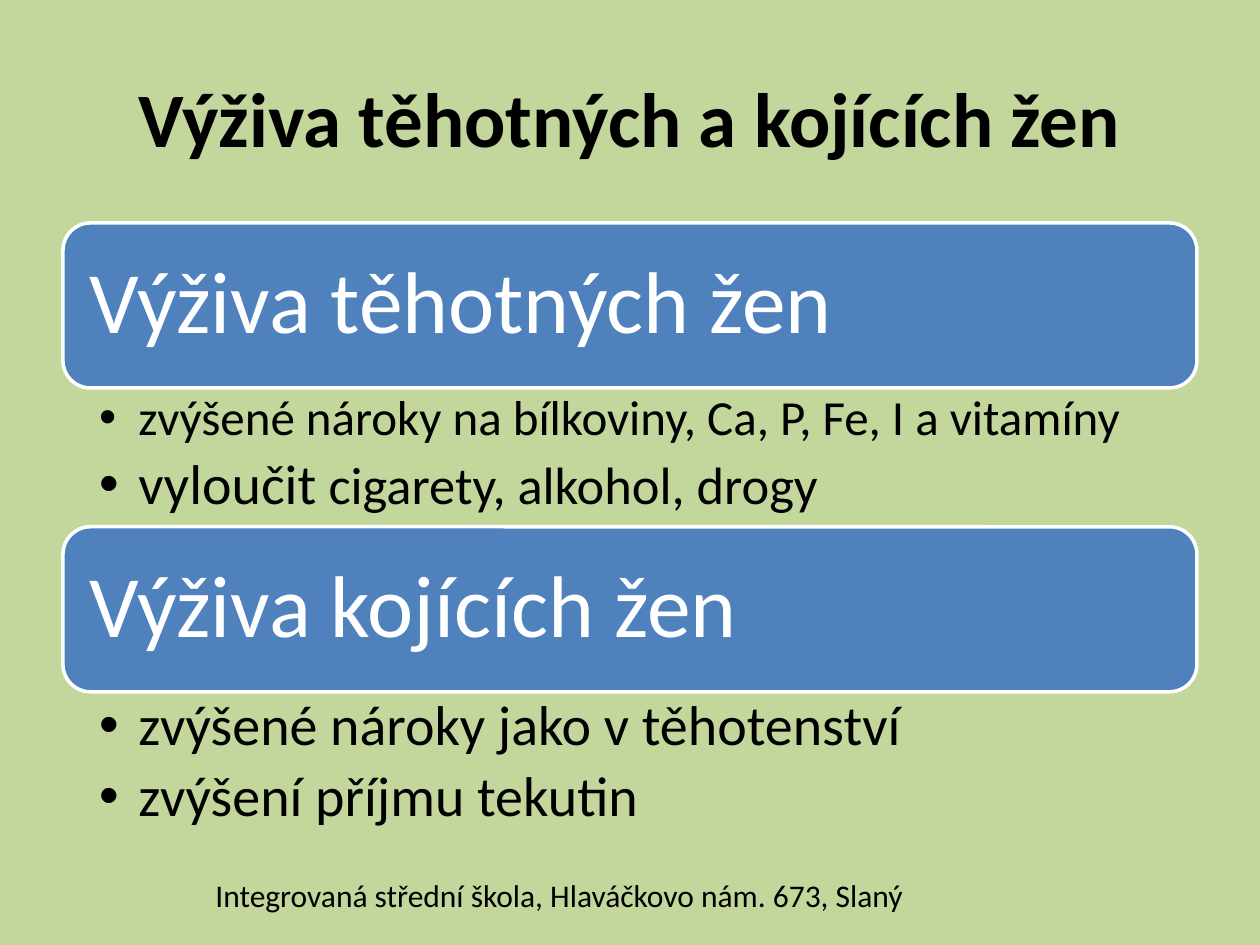
from lxml.etree import SubElement
from pptx import Presentation
from pptx.dml.color import RGBColor
from pptx.enum.shapes import MSO_SHAPE
from pptx.enum.text import MSO_ANCHOR, PP_ALIGN
from pptx.oxml.ns import qn
from pptx.util import Pt

GREEN = RGBColor(0xC3, 0xD6, 0x9B)
BLUE = RGBColor(0x4F, 0x81, 0xBD)
WHITE = RGBColor(0xFF, 0xFF, 0xFF)
BLACK = RGBColor(0, 0, 0)
FONT = "Calibri"
LEFT, WIDE = 36, 648
TOP, STEP, HIGH = 127.4, 173.6, 94.3

PARTS = [
    ("Výživa těhotných žen", 79.2, [
        [("zvýšené nároky na bílkoviny, Ca, P, Fe, I a vitamíny", 28)],
        [("vyloučit", 32), (" cigarety, alkohol, drogy", 30)],
    ]),
    ("Výživa kojících žen", 85.7, [
        [("zvýšené nároky jako v těhotenství", 32)],
        [("zvýšení příjmu tekutin", 32)],
    ]),
]


def add_run(para, text, size, color=BLACK, bold=False):
    """Add one formatted run to a paragraph."""
    run = para.add_run()
    run.text = text
    font = run.font
    font.name, font.size, font.bold = FONT, Pt(size), bold
    font.color.rgb = color


def set_frame(frame, left, top, right, low, anchor=MSO_ANCHOR.TOP):
    """Set the wrapping, insets and anchor of a text frame."""
    frame.word_wrap = True
    frame.vertical_anchor = anchor
    frame.margin_left, frame.margin_top = Pt(left), Pt(top)
    frame.margin_right, frame.margin_bottom = Pt(right), Pt(low)


def set_bullet(para):
    """Give a paragraph a round bullet and a hanging indent."""
    props = para._p.get_or_add_pPr()
    props.set("marL", str(Pt(22.5)))
    props.set("indent", str(Pt(-22.5)))
    SubElement(props, qn("a:buFont"), typeface="Arial")
    SubElement(props, qn("a:buChar"), char="•")


def add_title(slide, text):
    """Place and fill the title."""
    title = slide.shapes.title
    title.left, title.top = Pt(LEFT), Pt(21.6)
    title.width, title.height = Pt(WIDE), Pt(90)
    title.text_frame.vertical_anchor = MSO_ANCHOR.MIDDLE
    para = title.text_frame.paragraphs[0]
    para.alignment = PP_ALIGN.CENTER
    add_run(para, text, 44, bold=True)


def add_bar(slide, top, text):
    """Draw a rounded heading bar."""
    bar = slide.shapes.add_shape(
        MSO_SHAPE.ROUNDED_RECTANGLE, Pt(LEFT), Pt(top), Pt(WIDE), Pt(HIGH))
    bar.shadow.inherit = False
    bar.fill.solid()
    bar.fill.fore_color.rgb = BLUE
    bar.line.color.rgb = WHITE
    bar.line.width = Pt(2)
    set_frame(bar.text_frame, 10.5, 10.5, 10.5, 10.5, MSO_ANCHOR.MIDDLE)
    para = bar.text_frame.paragraphs[0]
    para.alignment = PP_ALIGN.LEFT
    para.line_spacing = 0.9
    add_run(para, text, 50, WHITE)


def add_list(slide, top, high, items):
    """Write a bulleted list below a bar."""
    box = slide.shapes.add_textbox(Pt(LEFT), Pt(top), Pt(WIDE), Pt(high))
    frame = box.text_frame
    set_frame(frame, 20.6, 2.9, 16, 2.9)
    for num, runs in enumerate(items):
        para = frame.add_paragraph() if num else frame.paragraphs[0]
        para.level = 1
        para.line_spacing = 0.9
        para.space_after = Pt(0.2 * runs[0][1])
        set_bullet(para)
        for text, size in runs:
            add_run(para, text, size)


def add_note(slide, text):
    """Write the line at the foot of the slide."""
    box = slide.shapes.add_textbox(Pt(116), Pt(497), Pt(533), Pt(29))
    box.text_frame.word_wrap = True
    add_run(box.text_frame.paragraphs[0], text, 18)


def main():
    """Build and save the slide."""
    deck = Presentation()
    deck.slide_width, deck.slide_height = Pt(720), Pt(540)
    slide = deck.slides.add_slide(deck.slide_layouts[5])
    slide.background.fill.solid()
    slide.background.fill.fore_color.rgb = GREEN
    add_title(slide, "Výživa těhotných a kojících žen")
    for num, (head, high, items) in enumerate(PARTS):
        top = TOP + num * STEP
        add_bar(slide, top, head)
        add_list(slide, top + HIGH, high, items)
    add_note(slide, "Integrovaná střední škola, Hlaváčkovo nám. 673, Slaný")
    deck.save("out.pptx")


if __name__ == "__main__":
    main()
